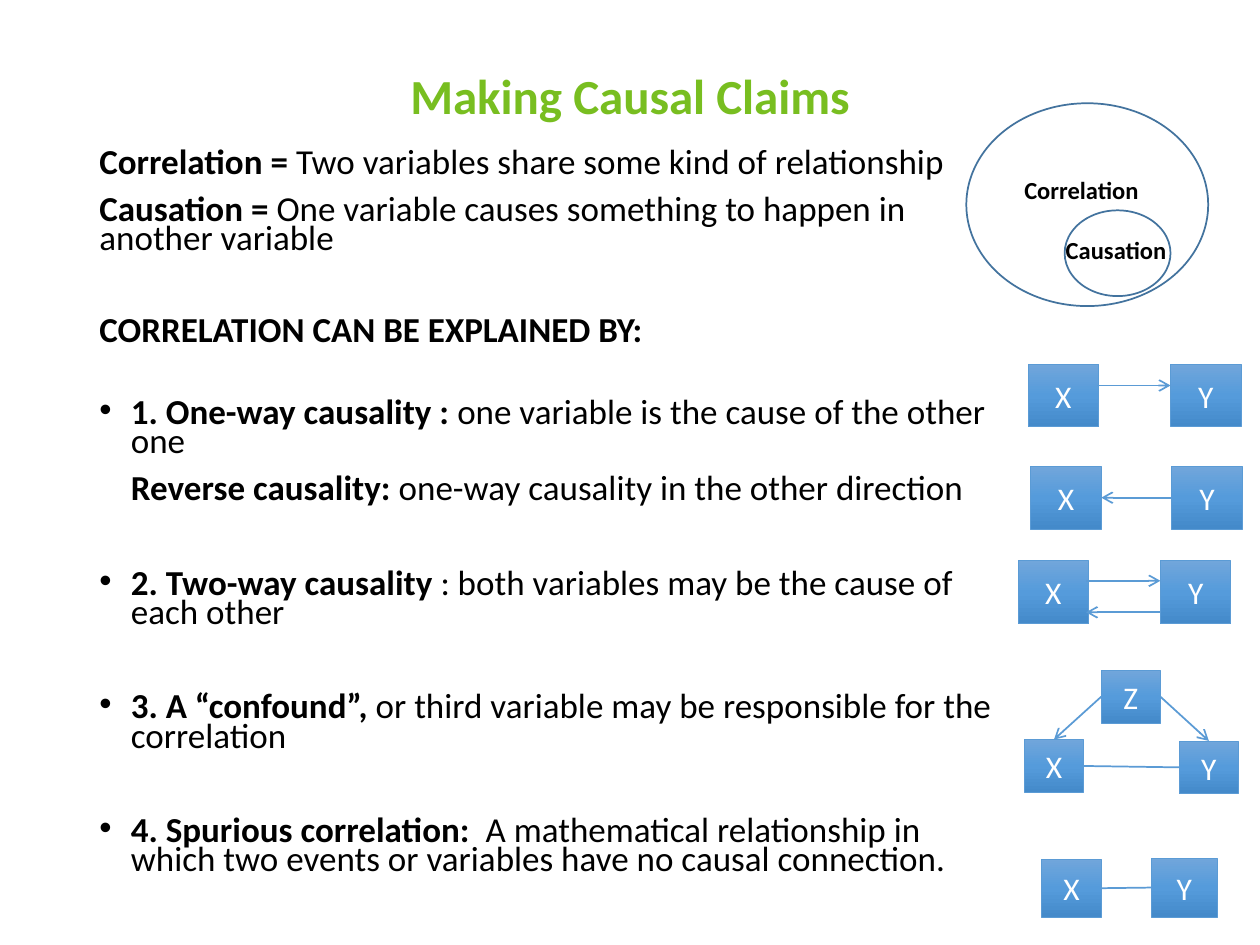
"""Build the slide "Making Causal Claims"."""
from copy import deepcopy

from pptx import Presentation
from pptx.dml.color import RGBColor
from pptx.enum.shapes import MSO_CONNECTOR as CONN, MSO_SHAPE as SHAPE
from pptx.enum.text import MSO_ANCHOR as ANCHOR, PP_ALIGN as ALIGN
from pptx.oxml.xmlchemy import OxmlElement
from pptx.util import Pt


def rgb(value):
    return RGBColor.from_string(value)


def style(font, size, color, bold=False):
    font.name, font.size, font.bold = "Calibri", Pt(size), bold
    font.color.rgb = rgb(color)


prs = Presentation()
prs.slide_width, prs.slide_height = Pt(720), Pt(540)
slide = prs.slides.add_slide(prs.slide_layouts[6])
shapes = slide.shapes

tf = shapes.add_textbox(Pt(49.7), Pt(28.8), Pt(620.6), Pt(54.7)).text_frame
tf.word_wrap = True
tf.vertical_anchor = ANCHOR.MIDDLE
p = tf.paragraphs[0]
p.text = "Making Causal Claims"
p.alignment, p.line_spacing = ALIGN.CENTER, 0.9
style(p.runs[0].font, 28, "78BE20", True)

body = [
    ("Correlation = ", "Two variables share some kind of relationship", 0, 0, False),
    ("Causation = ", "One variable causes something to happen in another variable", 10, 0, False),
    ("CORRELATION CAN BE EXPLAINED BY:", "", 35.4, 0, False),
    ("1. One-way causality : ", "one variable is the cause of the other one", 30.2, 18, True),
    ("Reverse causality: ", "one-way causality in the other direction", 10, 18, False),
    ("2. Two-way causality ", ": both variables may be the cause of each other", 37, 18, True),
    ("3. A “confound”, ", "or third variable may be responsible for the correlation", 37, 18, True),
    ("4. Spurious correlation: ", " A mathematical relationship in which two events or "
     "variables have no causal connection.", 37, 18, True),
]
tf = shapes.add_textbox(Pt(49.7), Pt(82.8), Pt(532.1), Pt(445)).text_frame
tf.word_wrap = True
for i, (term, meaning, before, margin, bullet) in enumerate(body):
    p = tf.add_paragraph() if i else tf.paragraphs[0]
    p.line_spacing, p.space_before = 0.7, Pt(before)
    pPr = p._p.get_or_add_pPr()
    pPr.set("marL", str(Pt(margin)))
    pPr.set("indent", str(Pt(-margin if bullet else 0)))
    if bullet:
        font = OxmlElement("a:buFont")
        font.set("typeface", "Arial")
        char = OxmlElement("a:buChar")
        char.set("char", "•")
        pPr.extend([font, char])
    for text, bold in ((term, True), (meaning, False)):
        if text:
            r = p.add_run()
            r.text = text
            style(r.font, 20, "000000", bold)

boxes = {}
for row, letter, x, y, w, h in [
    ("one-way", "X", 587.5, 208, 40.3, 36),
    ("one-way", "Y", 668.9, 208, 40.3, 36),
    ("reverse", "X", 589, 266.4, 40.3, 36),
    ("reverse", "Y", 669.6, 266.4, 40.3, 36),
    ("two-way", "X", 581.8, 320.4, 40.3, 36),
    ("two-way", "Y", 663.1, 320.4, 40.3, 36),
    ("confound", "X", 585.4, 422.6, 33.8, 30.2),
    ("confound", "Y", 673.9, 423.4, 33.8, 30.2),
    ("confound", "Z", 629.3, 383, 33.8, 30.2),
    ("spurious", "X", 595.4, 491, 33.8, 33.1),
    ("spurious", "Y", 658.1, 490.3, 37.4, 33.8),
]:
    s = shapes.add_shape(SHAPE.RECTANGLE, Pt(x), Pt(y), Pt(w), Pt(h))
    s.shadow.inherit = False
    s.fill.gradient()
    s.fill.gradient_angle = 270
    stops = s._element.xpath(".//a:gsLst")[0]
    stops.append(deepcopy(stops[0]))
    colors = ("71A6DB", "559BDB", "448ACA")
    for stop, position, color in zip(s.fill.gradient_stops, (0, 0.5, 1), colors):
        stop.position, stop.color.rgb = position, rgb(color)
    s.line.color.rgb, s.line.width = rgb("5B9BD5"), Pt(0.5)
    tf = s.text_frame
    tf.text = letter
    tf.vertical_anchor = ANCHOR.MIDDLE
    p = tf.paragraphs[0]
    p.alignment = ALIGN.CENTER
    style(p.runs[0].font, 18, "FFFFFF")
    boxes[row, letter] = s

lines = []
for x1, x2, y in [(627.1, 668.9, 220.3), (620.6, 663.1, 331.9), (663.1, 620.6, 349.9)]:
    s = shapes.add_connector(CONN.STRAIGHT, Pt(x1), Pt(y), Pt(x2), Pt(y))
    lines.append((s, True))
for row, start, start_side, end, end_side, arrow in [
    ("reverse", "Y", 1, "X", 3, True),
    ("confound", "Y", 1, "X", 3, False),
    ("confound", "Z", 3, "Y", 0, True),
    ("confound", "Z", 1, "X", 0, True),
    ("spurious", "Y", 1, "X", 3, False),
]:
    s = shapes.add_connector(CONN.STRAIGHT, 0, 0, 0, 0)
    s.begin_connect(boxes[row, start], start_side)
    s.end_connect(boxes[row, end], end_side)
    lines.append((s, arrow))
for s, arrow in lines:
    s.line.color.rgb, s.line.width = rgb("5B9BD5"), Pt(1)
    if arrow:
        tail = OxmlElement("a:tailEnd")
        tail.set("type", "arrow")
        s.line._get_or_add_ln().append(tail)
    s._element.spPr.append(OxmlElement("a:effectLst"))

for x, y, w, h in [(552.2, 59, 138.2, 115.9), (608.4, 120.2, 60.5, 49)]:
    s = shapes.add_shape(SHAPE.OVAL, Pt(x), Pt(y), Pt(w), Pt(h))
    s.shadow.inherit = False
    s.fill.background()
    s.line.color.rgb, s.line.width = rgb("43739E"), Pt(1)

for text, x, y, w in [("Correlation", 578.2, 96.5, 80.6), ("Causation", 601.9, 131, 72.7)]:
    tf = shapes.add_textbox(Pt(x), Pt(y), Pt(w), Pt(24.5)).text_frame
    tf.word_wrap = False
    tf.text = text
    style(tf.paragraphs[0].runs[0].font, 14, "000000", True)

prs.save("out.pptx")
